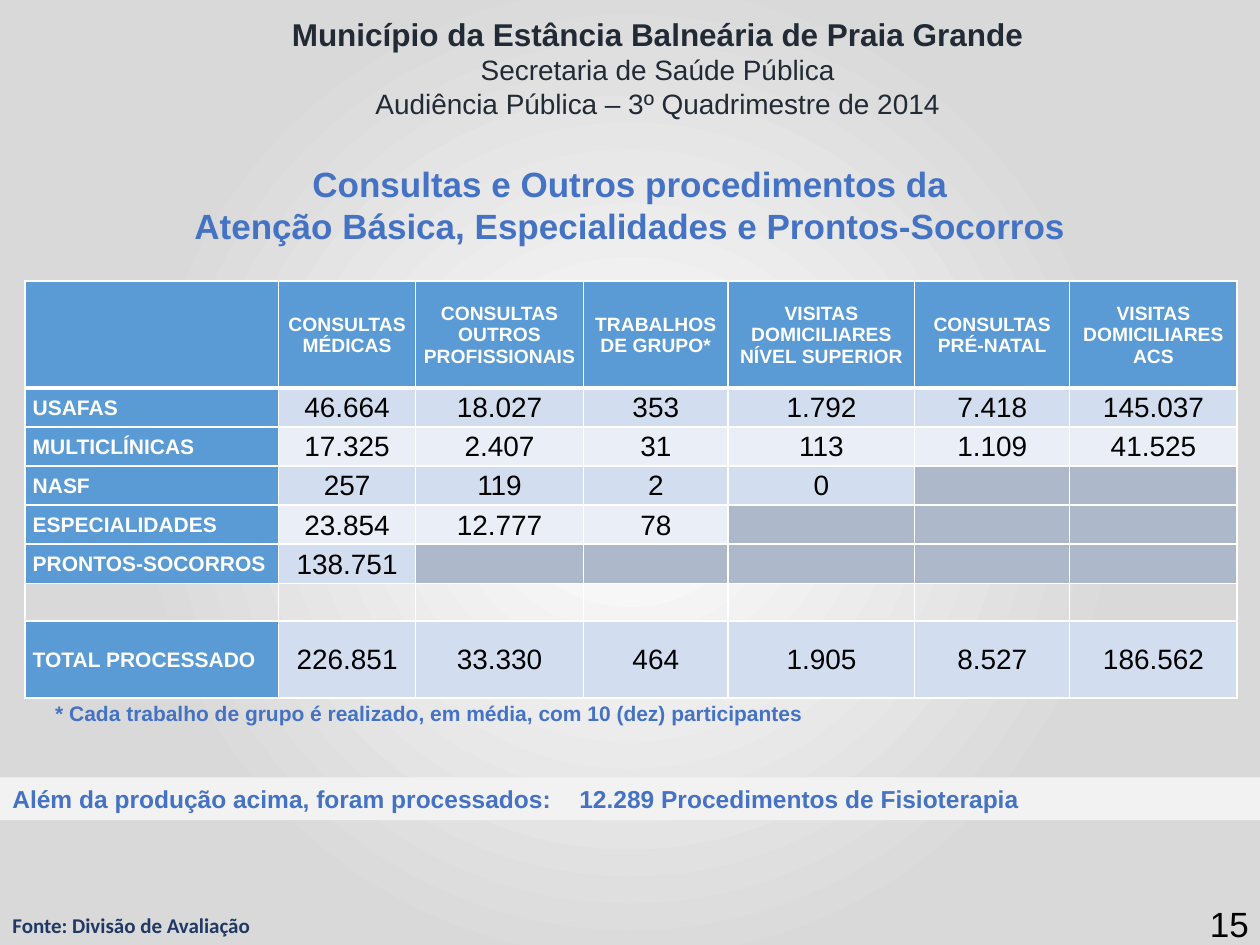
from dataclasses import dataclass

from lxml.etree import SubElement
from pptx import Presentation
from pptx.dml.color import RGBColor
from pptx.enum.shapes import MSO_SHAPE
from pptx.enum.text import MSO_ANCHOR as Anchor, MSO_AUTO_SIZE as AutoSize, PP_ALIGN as Align
from pptx.oxml import parse_xml
from pptx.oxml.ns import nsdecls, qn
from pptx.util import Inches, Pt


@dataclass(frozen=True)
class Theme:
    """Colours, type sizes and fonts of the slide."""
    font: str = "Arial"
    source_font: str = "Calibri"
    white: str = "FFFFFF"
    black: str = "000000"
    ink: str = "222A35"
    navy: str = "203864"
    accent: str = "4472C4"
    band: str = "F2F2F2"
    edge: str = "D9D9D9"
    head: str = "5B9BD5"
    row_dark: str = "D2DEEF"
    row_light: str = "EAEFF7"
    blocked: str = "ADB9CA"
    title: int = 20
    heading: int = 18
    value: int = 16
    banner: int = 14
    label: int = 12
    column: int = 11


THEME = Theme()
COLUMN_WIDTHS = [2.01, 1.09, 1.33, 1.15, 1.48, 1.23, 1.33]
ROW_HEIGHTS = [0.85] + [0.31] * 5 + [0.3, 0.61]
ROWS = [
    ["", "CONSULTAS MÉDICAS", "CONSULTAS OUTROS PROFISSIONAIS", "TRABALHOS DE GRUPO*",
     "VISITAS DOMICILIARES NÍVEL SUPERIOR", "CONSULTAS PRÉ-NATAL", "VISITAS DOMICILIARES ACS"],
    ["USAFAS", "46.664", "18.027", "353", "1.792", "7.418", "145.037"],
    ["MULTICLÍNICAS", "17.325", "2.407", "31", "113", "1.109", "41.525"],
    ["NASF", "257", "119", "2", "0", "", ""],
    ["ESPECIALIDADES", "23.854", "12.777", "78", "", "", ""],
    ["PRONTOS-SOCORROS", "138.751", "", "", "", "", ""],
    [""] * 7,
    ["TOTAL PROCESSADO", "226.851", "33.330", "464", "1.905", "8.527", "186.562"],
]
SPACER_ROW = 6


def style_paragraph(paragraph, size, color, bold=True, align=Align.LEFT, font=THEME.font):
    """Format a paragraph and each of its runs."""
    paragraph.alignment = align
    for run in paragraph.runs:
        for name, value in {"name": font, "size": Pt(size), "bold": bold}.items():
            setattr(run.font, name, value)
        run.font.color.rgb = RGBColor.from_string(color)


def place(shape, left, top, width, height):
    """Move and size a shape, in inches."""
    box = {"left": left, "top": top, "width": width, "height": height}
    for name, value in box.items():
        setattr(shape, name, Inches(value))


def set_background(slide):
    """Fill the background with a radial gradient."""
    stops = "".join(
        f'<a:gs pos="{percent * 1000}"><a:srgbClr val="{color}"/></a:gs>'
        for percent, color in [(0, THEME.white), (65, THEME.edge), (97, THEME.edge)])
    gradient = parse_xml(
        f'<a:gradFill {nsdecls("a")} rotWithShape="1"><a:gsLst>{stops}</a:gsLst>'
        '<a:path path="circle"><a:fillToRect l="50000" t="50000" r="50000" b="50000"/></a:path>'
        '</a:gradFill>')
    slide.background.fill.solid()
    properties = slide.background._cSld.bg.bgPr
    properties.replace(properties.find(qn("a:solidFill")), gradient)


def add_text(slide, box, lines, wrap=True, anchor=Anchor.TOP):
    """Add a text box from (text, format) lines."""
    text_box = slide.shapes.add_textbox(*map(Inches, box))
    frame = text_box.text_frame
    frame.word_wrap = wrap
    frame.vertical_anchor = anchor
    for index, (text, style) in enumerate(lines):
        paragraph = frame.add_paragraph() if index else frame.paragraphs[0]
        paragraph.text = text
        style_paragraph(paragraph, **style)


def set_title(slide, text):
    """Write the slide title in its placeholder."""
    title = slide.shapes.title
    place(title, 0, 1.24, 10, 0.77)
    frame = title.text_frame
    frame.text = text
    frame.auto_size = AutoSize.NONE
    frame.vertical_anchor = Anchor.TOP
    style_paragraph(frame.paragraphs[0], THEME.title, THEME.accent, align=Align.CENTER)


def add_banner(slide, text):
    """Add the full-width band with its text."""
    banner = slide.shapes.add_shape(MSO_SHAPE.RECTANGLE, *map(Inches, (0, 6.17, 10, 0.34)))
    banner.shadow.inherit = False
    banner.fill.solid()
    banner.fill.fore_color.rgb = RGBColor.from_string(THEME.band)
    banner.line.fill.background()
    frame = banner.text_frame
    frame.word_wrap = True
    frame.vertical_anchor = Anchor.TOP
    frame.text = text
    style_paragraph(frame.paragraphs[0], THEME.banner, THEME.accent)


def set_borders(cell, top, bottom):
    """Draw white borders round a cell."""
    properties = cell._tc.get_or_add_tcPr()
    for side, width in {"lnL": 1, "lnR": 1, "lnT": top, "lnB": bottom}.items():
        line = SubElement(properties, qn(f"a:{side}"), w=str(Pt(width)))
        SubElement(SubElement(line, qn("a:solidFill")), qn("a:srgbClr"), val=THEME.white)


def cell_fill(row, column, text):
    """Return the fill colour of a cell, or None for no fill."""
    if row == SPACER_ROW:
        return None
    if row == 0 or column == 0:
        return THEME.head
    if not text:
        return THEME.blocked
    return THEME.row_dark if row % 2 else THEME.row_light


def fill_cell(cell, row, column, text):
    """Write and format one table cell."""
    margins = {"margin_left": 0.06 if column == 0 else 0.01, "margin_right": 0.01,
               "margin_top": 0.01, "margin_bottom": 0}
    for name, value in margins.items():
        setattr(cell, name, Inches(value))
    cell.vertical_anchor = Anchor.MIDDLE
    set_borders(cell, top=3 if row == 1 else 1, bottom=3 if row == 0 else 1)
    color = cell_fill(row, column, text)
    if color:
        cell.fill.solid()
        cell.fill.fore_color.rgb = RGBColor.from_string(color)
    else:
        cell.fill.background()
    paragraph = cell.text_frame.paragraphs[0]
    if not text:
        SubElement(paragraph._p, qn("a:endParaRPr"), sz=str(THEME.label * 100))
        return
    paragraph.text = text
    if row == 0:
        style_paragraph(paragraph, THEME.column, THEME.white, align=Align.CENTER)
    elif column == 0:
        style_paragraph(paragraph, THEME.label, THEME.white)
    else:
        style_paragraph(paragraph, THEME.value, THEME.black, False, Align.CENTER)


def add_procedures_table(slide):
    """Add the table of consultations and procedures."""
    box = map(Inches, (0.2, 2.23, sum(COLUMN_WIDTHS), sum(ROW_HEIGHTS)))
    table = slide.shapes.add_table(len(ROWS), len(COLUMN_WIDTHS), *box).table
    table.horz_banding = False
    for column, width in zip(table.columns, COLUMN_WIDTHS):
        column.width = Inches(width)
    for row, height in zip(table.rows, ROW_HEIGHTS):
        row.height = Inches(height)
    for row, texts in enumerate(ROWS):
        for column, text in enumerate(texts):
            fill_cell(table.cell(row, column), row, column, text)


def main():
    """Build and save the slide."""
    deck = Presentation()
    deck.slide_width, deck.slide_height = Inches(10), Inches(7.5)
    slide = deck.slides.add_slide(deck.slide_layouts[5])
    set_background(slide)
    heading = {"size": THEME.heading, "color": THEME.ink, "align": Align.CENTER}
    subheading = {**heading, "size": THEME.value, "bold": False}
    add_text(slide, (1.13, 0.07, 8.18, 0.94), [
        ("Município da Estância Balneária de Praia Grande", heading),
        ("Secretaria de Saúde Pública", subheading),
        ("Audiência Pública – 3º Quadrimestre de 2014", subheading)])
    add_text(slide, (0, 7.19, 2.11, 0.3), [
        ("Fonte: Divisão de Avaliação",
         {"size": THEME.label, "color": THEME.navy, "font": THEME.source_font})], wrap=False)
    add_banner(slide, "Além da produção acima, foram processados:\t12.289 Procedimentos de Fisioterapia")
    set_title(slide, "Consultas e Outros procedimentos da\v"
                     "Atenção Básica, Especialidades e Prontos-Socorros")
    add_procedures_table(slide)
    add_text(slide, (0.34, 5.51, 9.66, 0.3), [
        ("* Cada trabalho de grupo é realizado, em média, com 10 (dez) participantes",
         {"size": THEME.label, "color": THEME.accent})])
    add_text(slide, (7.68, 7.13, 2.33, 0.4), [
        ("15", {"size": THEME.title, "color": THEME.black, "bold": False, "align": Align.RIGHT})],
        anchor=Anchor.MIDDLE)
    deck.save("out.pptx")


if __name__ == "__main__":
    main()
